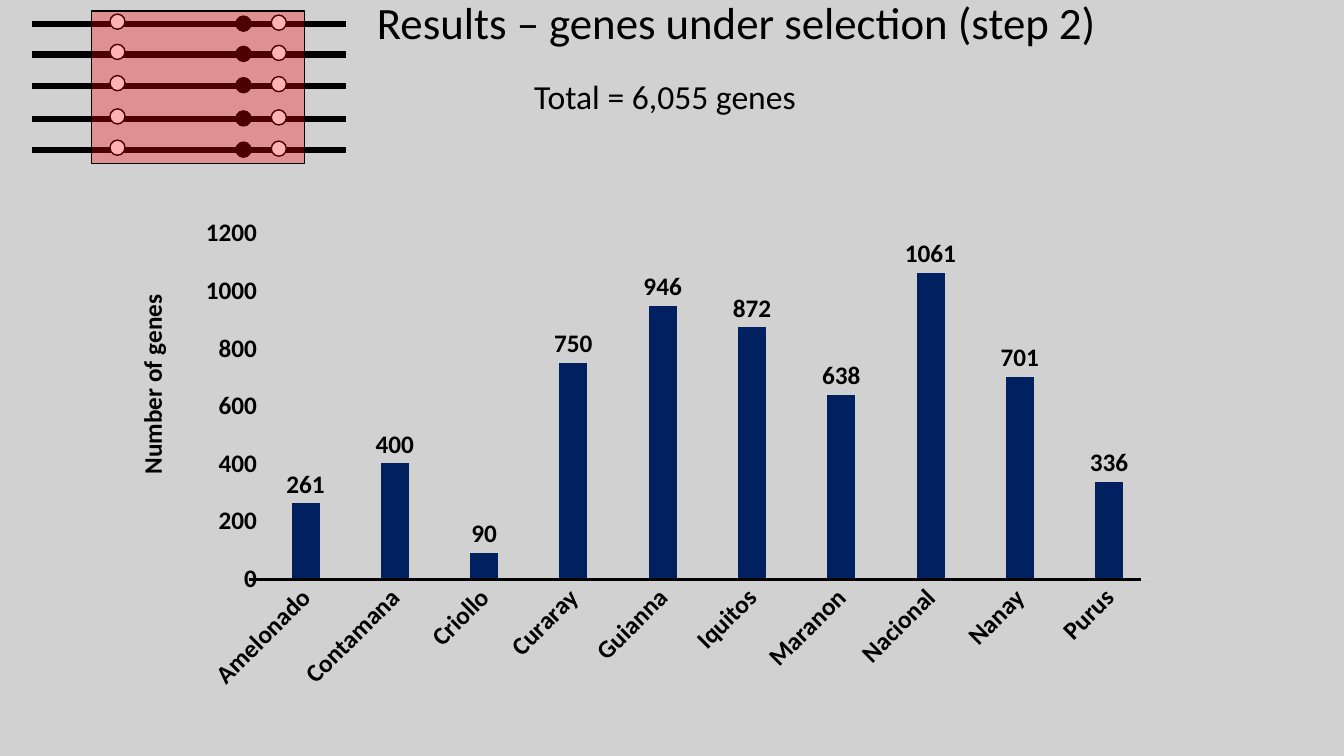
import dataclasses

import pptx
import pptx.chart.data
import pptx.dml.color
import pptx.enum.chart
import pptx.enum.shapes
import pptx.enum.text
import pptx.oxml.ns
import pptx.oxml.xmlchemy
import pptx.util

EMU_PER_PX = 9144


@dataclasses.dataclass(frozen=True)
class Theme:
    font: str = "Calibri"
    background: str = "D1D1D1"
    ink: str = "000000"
    white: str = "FFFFFF"
    bar: str = "002060"
    window: str = "FF0000"
    axis: str = "D9D9D9"
    title_size: int = 32
    subtitle_size: int = 24
    chart_size: int = 18


def px(value):
    return pptx.util.Emu(value * EMU_PER_PX)


def rgb(color):
    return pptx.dml.color.RGBColor.from_string(color)


def add_child(parent, tag, **attributes):
    child = pptx.oxml.xmlchemy.OxmlElement(tag)
    for name, value in attributes.items():
        child.set(name, str(value))
    parent.append(child)
    return child


def place(element, **values):
    layout = element.find(pptx.oxml.ns.qn("c:layout"))
    if layout is None:
        layout = pptx.oxml.xmlchemy.OxmlElement("c:layout")
        element.insert(0, layout)
    manual = add_child(layout, "c:manualLayout")
    for name, value in values.items():
        add_child(manual, f"c:{name}", val=value)


class SlideBuilder:
    def __init__(self, slide, theme):
        self.slide = slide
        self.theme = theme
        fill = slide.background.fill
        fill.solid()
        fill.fore_color.rgb = rgb(theme.background)

    def style_font(self, font, size, bold=False):
        font.name = self.theme.font
        font.size = pptx.util.Pt(size)
        font.bold = bold
        font.color.rgb = rgb(self.theme.ink)

    def text(self, left, top, width, height, content, size):
        box = self.slide.shapes.add_textbox(px(left), px(top), px(width), px(height))
        frame = box.text_frame
        frame.word_wrap = True
        frame.auto_size = pptx.enum.text.MSO_AUTO_SIZE.SHAPE_TO_FIT_TEXT
        frame.text = content
        self.style_font(frame.paragraphs[0].runs[0].font, size)

    def horizontal_line(self, shapes, left, right, y, weight):
        line = shapes.add_connector(
            pptx.enum.shapes.MSO_CONNECTOR.STRAIGHT, px(left), px(y), px(right), px(y))
        line.line.color.rgb = rgb(self.theme.ink)
        line.line.width = pptx.util.Pt(weight)
        add_child(line._element.spPr, "a:effectLst")

    def shape(self, shapes, kind, left, top, width, height, color, opacity=100):
        shape = shapes.add_shape(kind, px(left), px(top), px(width), px(height))
        shape.shadow.inherit = False
        shape.fill.solid()
        shape.fill.fore_color.rgb = rgb(color)
        if opacity < 100:
            color_element = shape._element.spPr.find(".//" + pptx.oxml.ns.qn("a:srgbClr"))
            add_child(color_element, "a:alpha", val=opacity * 1000)
        shape.line.color.rgb = rgb(self.theme.ink)
        shape.line.width = pptx.util.Pt(1)

    def column_chart(self, left, top, width, height, axis_title, counts):
        theme = self.theme
        data = pptx.chart.data.CategoryChartData()
        data.categories = list(counts)
        data.add_series("Series 1", list(counts.values()))
        chart = self.slide.shapes.add_chart(
            pptx.enum.chart.XL_CHART_TYPE.COLUMN_CLUSTERED,
            px(left), px(top), px(width), px(height), data).chart
        chart.has_legend = False
        chart.has_title = False
        self.style_font(chart.font, theme.chart_size, True)

        plot = chart.plots[0]
        plot.vary_by_categories = False
        plot.gap_width = 219
        plot.overlap = -27
        series = plot.series[0]
        series.format.fill.solid()
        series.format.fill.fore_color.rgb = rgb(theme.bar)
        labels = series.data_labels
        labels.show_value = True
        labels.position = pptx.enum.chart.XL_LABEL_POSITION.OUTSIDE_END
        self.style_font(labels.font, theme.chart_size, True)

        for axis in (chart.category_axis, chart.value_axis):
            axis.has_major_gridlines = False
            axis.major_tick_mark = pptx.enum.chart.XL_TICK_MARK.NONE
            axis.minor_tick_mark = pptx.enum.chart.XL_TICK_MARK.NONE
            self.style_font(axis.tick_labels.font, theme.chart_size, True)

        category_axis = chart.category_axis
        category_axis.format.line.color.rgb = rgb(theme.axis)
        category_axis.format.line.width = pptx.util.Pt(0.75)
        body = category_axis._element.find(".//" + pptx.oxml.ns.qn("a:bodyPr"))
        body.set("rot", str(-45 * 60000))
        body.set("vert", "horz")

        value_axis = chart.value_axis
        value_axis.format.line.fill.background()
        value_axis.minimum_scale = 0
        value_axis.maximum_scale = 1200
        value_axis.major_unit = 200
        title = value_axis.axis_title
        title.text_frame.text = axis_title
        self.style_font(title.text_frame.paragraphs[0].runs[0].font, theme.chart_size, True)
        place(title._element, xMode="edge", yMode="edge", x=0.04, y=0.24)
        place(chart._chartSpace.chart.plotArea, layoutTarget="inner",
              xMode="edge", yMode="edge", x=0.16, y=0.145, w=0.82, h=0.576)

    def chromosome_diagram(self):
        theme = self.theme
        shapes = self.slide.shapes.add_group_shape().shapes
        strands = (24, 54, 85, 118, 149)
        markers = ((109, -10, theme.white), (234, -8, theme.ink), (269, -9, theme.white))
        for y in strands:
            self.horizontal_line(shapes, 32, 343, y, 4.5)
        for left, offset, color in markers:
            for y in strands:
                self.shape(shapes, pptx.enum.shapes.MSO_SHAPE.OVAL,
                           left, y + offset, 15, 15, color)
        self.shape(shapes, pptx.enum.shapes.MSO_SHAPE.RECTANGLE,
                   91, 11, 211, 151, theme.window, opacity=30)


def main():
    presentation = pptx.Presentation()
    presentation.slide_width = px(1333)
    presentation.slide_height = px(750)
    theme = Theme()
    builder = SlideBuilder(
        presentation.slides.add_slide(presentation.slide_layouts[6]), theme)
    gene_counts = {
        "Amelonado": 261, "Contamana": 400, "Criollo": 90, "Curaray": 750,
        "Guianna": 946, "Iquitos": 872, "Maranon": 638, "Nacional": 1061,
        "Nanay": 701, "Purus": 336,
    }
    builder.column_chart(86, 145, 1080, 595, "Number of genes", gene_counts)
    builder.text(364, -10, 749, 64, "Results – genes under selection (step 2)",
                 theme.title_size)
    builder.text(520, 70, 293, 50, "Total = 6,055 genes", theme.subtitle_size)
    builder.horizontal_line(builder.slide.shapes, 247, 1132, 575, 2.25)
    builder.chromosome_diagram()
    presentation.save("out.pptx")


if __name__ == "__main__":
    main()
